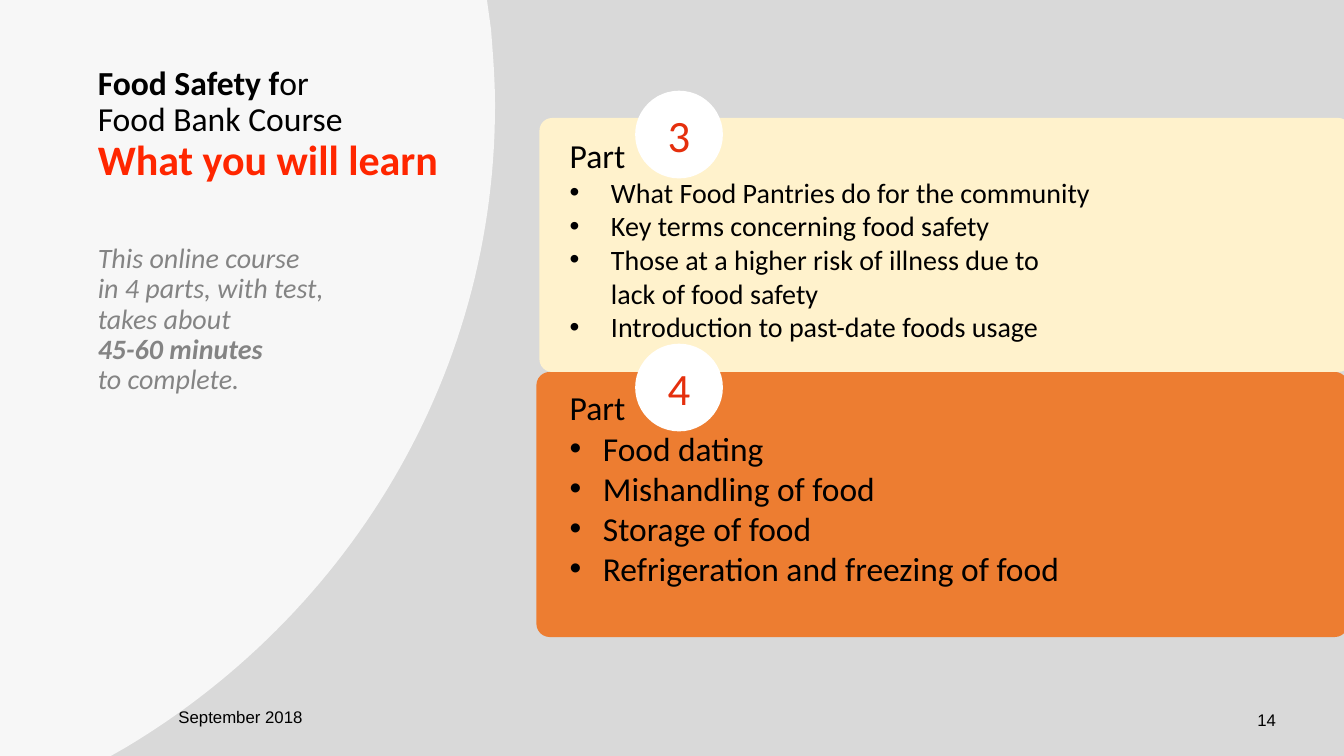
from dataclasses import dataclass
from typing import Optional

from lxml import etree
from pptx import Presentation
from pptx.dml.color import RGBColor
from pptx.enum.shapes import MSO_SHAPE as SHAPE
from pptx.enum.text import MSO_ANCHOR as ANCHOR, PP_ALIGN as ALIGN
from pptx.oxml.ns import qn
from pptx.util import Inches, Pt

COLORS = {
    "backdrop": "D9D9D9", "white": "FFFFFF", "black": "000000",
    "cream": "FFF2CC", "orange": "ED7D31", "red": "FF2600",
    "number": "E52F0D", "gray": "848484",
}


@dataclass
class Run:
    text: str
    size: float = 24
    color: str = "black"
    bold: bool = False
    italic: bool = False
    font: str = "Calibri"


@dataclass
class Para:
    runs: list[Run]
    line: Optional[float] = None
    before: float = 0
    indent: float = 0


@dataclass
class Panel:
    left: float
    top: float
    height: float
    color: str


@dataclass
class Badge:
    number: str
    top: float


def fill_shape(s, color: str, opacity: int = 100) -> None:
    s.shadow.inherit = False
    s.fill.solid()
    s.fill.fore_color.rgb = RGBColor.from_string(COLORS[color])
    s.line.fill.background()
    if opacity < 100:
        clr = s.fill._xPr.find(qn("a:solidFill"))[0]
        etree.SubElement(clr, qn("a:alpha"), val=str(opacity * 1000))


def add_panel(shapes, kind, left: float, top: float, width: float,
              height: float, color: str):
    s = shapes.add_shape(kind, Inches(left), Inches(top), Inches(width), Inches(height))
    fill_shape(s, color)
    return s


def add_bullet(p, indent: float) -> None:
    pPr = p._p.get_or_add_pPr()
    pPr.set("marL", str(Inches(indent)))
    pPr.set("indent", str(-Inches(indent)))
    etree.SubElement(pPr, qn("a:buFont"), typeface="Arial")
    etree.SubElement(pPr, qn("a:buChar"), char="•")


def write_text(s, paras: list[Para], *, align=ALIGN.LEFT, anchor=ANCHOR.TOP,
               wrap: bool = True) -> None:
    tf = s.text_frame
    tf.word_wrap = wrap
    tf.vertical_anchor = anchor
    tf.margin_left = tf.margin_right = tf.margin_top = tf.margin_bottom = Inches(0.05)
    for i, para in enumerate(paras):
        p = tf.paragraphs[0] if i == 0 else tf.add_paragraph()
        p.alignment = align
        p.space_before = Pt(para.before)
        if para.line:
            p.line_spacing = para.line
        if para.indent:
            add_bullet(p, para.indent)
        for run in para.runs:
            for j, piece in enumerate(run.text.split("\n")):
                if j:
                    p.add_line_break()
                if not piece:
                    continue
                r = p.add_run()
                r.text = piece
                r.font.name = run.font
                r.font.size = Pt(run.size)
                r.font.bold = run.bold
                r.font.italic = run.italic
                r.font.color.rgb = RGBColor.from_string(COLORS[run.color])


def add_text(shapes, left: float, top: float, width: float, height: float,
             paras: list[Para], **fmt) -> None:
    s = shapes.add_textbox(Inches(left), Inches(top), Inches(width), Inches(height))
    write_text(s, paras, **fmt)


def bezier(pts: list[tuple[float, float]], steps: int = 60) -> list[tuple[float, float]]:
    """Points along a cubic curve, without its start."""
    curve = []
    for i in range(1, steps + 1):
        t = i / steps
        weights = ((1 - t) ** 3, 3 * t * (1 - t) ** 2, 3 * t * t * (1 - t), t ** 3)
        curve.append((sum(w * x for w, (x, _) in zip(weights, pts)),
                      sum(w * y for w, (_, y) in zip(weights, pts))))
    return curve


def add_arc_panel(shapes) -> None:
    outline = [(4.83, 0), (4.87, 0.29)]
    outline += bezier([(4.87, 0.29), (4.89, 0.54), (4.91, 0.8), (4.91, 1.05)], 10)
    outline += bezier([(4.91, 1.05), (4.91, 3.75), (3.44, 6.11), (1.24, 7.42)])
    outline += [(1.1, 7.5), (-0.04, 7.5)]
    builder = shapes.build_freeform(Inches(-0.04), 0)
    builder.add_line_segments([(Inches(x), Inches(y)) for x, y in outline])
    fill_shape(builder.convert_to_shape(), "white", opacity=80)


PANELS = [Panel(5.32, 3.69, 2.63, "orange"), Panel(5.35, 1.17, 2.52, "cream")]
BADGES = [Badge("3", 0.9), Badge("4", 3.41)]
PART_3 = [
    "What Food Pantries do for the community",
    "Key terms concerning food safety",
    "Those at a higher risk of illness due to\nlack of food safety",
    "Introduction to past-date foods usage",
]
PART_4 = [
    "Food dating",
    "Mishandling of food",
    "Storage of food",
    "Refrigeration and freezing of food",
]
TITLE = [
    Para([Run("Food Safety f", bold=True),
          Run("or\nFood Bank Course\n"),
          Run("What you will learn", 30, "red", bold=True)], line=0.9),
    Para([Run("This online course\nin 4 parts, with test,\ntakes about\n",
              20, "gray", italic=True),
          Run("45-60 minutes\n", 20, "gray", bold=True, italic=True),
          Run("to complete.", 20, "gray", italic=True)], line=0.9, before=43),
]


def main() -> None:
    prs = Presentation()
    prs.slide_width, prs.slide_height = Inches(13.33), Inches(7.5)
    shapes = prs.slides.add_slide(prs.slide_layouts[6]).shapes

    # Backdrop and panels
    add_panel(shapes, SHAPE.RECTANGLE, 0, -0.02, 13.33, 7.54, "backdrop")
    for panel in PANELS:
        s = add_panel(shapes, SHAPE.ROUNDED_RECTANGLE, panel.left, panel.top,
                      8.05, panel.height, panel.color)
        s.adjustments[0] = 0.05

    # Course parts
    body = [Para([Run("Part")], line=0.9, before=10)]
    body += [Para([Run(item, 20)], indent=0.41) for item in PART_3]
    body += [Para([Run("Part")], line=0.9, before=34.4)]
    body += [Para([Run(item, 23.9)], indent=0.33) for item in PART_4]
    add_text(shapes, 5.6, 1.33, 7.72, 4.84, body)

    # Left side, page number and date
    add_arc_panel(shapes)
    add_text(shapes, 12.42, 7, 0.3, 0.29, [Para([Run("14", 12, font="Arial")])],
             anchor=ANCHOR.MIDDLE, wrap=False)
    add_text(shapes, 1.72, 6.96, 1.98, 0.29,
             [Para([Run("September 2018", 12, font="Arial")])])
    add_text(shapes, 0.92, 0.61, 3.9, 5.48, TITLE)

    # Numbered badges
    for badge in BADGES:
        s = add_panel(shapes, SHAPE.OVAL, 6.3, badge.top, 0.87, 0.87, "white")
        write_text(s, [Para([Run(badge.number, 32, "number")])],
                   align=ALIGN.CENTER, anchor=ANCHOR.MIDDLE)

    prs.save("out.pptx")


if __name__ == "__main__":
    main()
